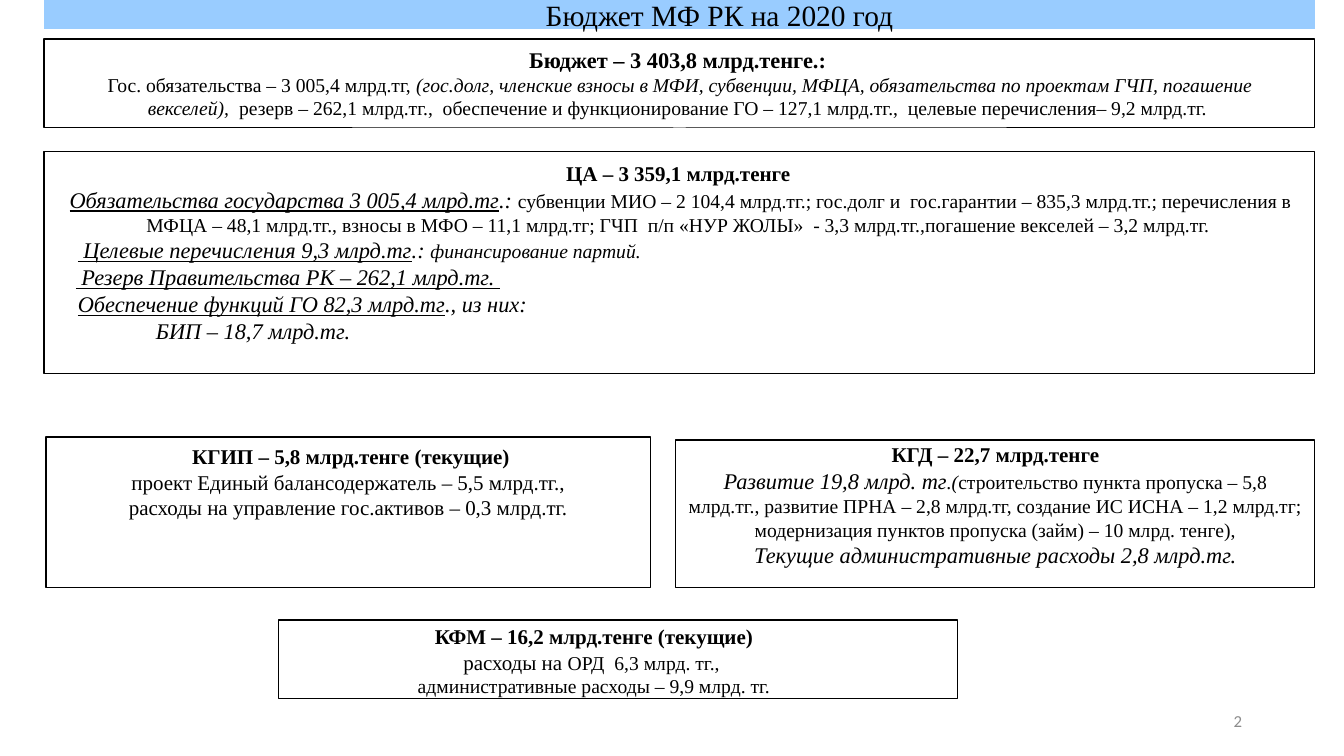
from pptx import Presentation
from pptx.dml.color import RGBColor
from pptx.enum.shapes import MSO_SHAPE
from pptx.enum.text import MSO_ANCHOR, MSO_AUTO_SIZE, PP_ALIGN
from pptx.util import Pt

BLACK = RGBColor(0, 0, 0)
GREY = RGBColor(0x8C, 0x8C, 0x8C)
BLUE = RGBColor(0x99, 0xCC, 0xFF)
SERIF = "Times New Roman"
SANS = "Calibri"
MID, LEFT, RIGHT = PP_ALIGN.CENTER, PP_ALIGN.LEFT, PP_ALIGN.RIGHT

TITLE = "Бюджет МФ РК на 2020 год"
BAR = (44, 0, 1271, 29)

# Each paragraph: alignment, left indent, runs of (text, size, style)
BLOCKS = [
    {
        "frame": (44, 39, 1271, 89),
        "text": (73, 41, 1215, 85),
        "paras": [
            (MID, 0, [("Бюджет – 3 403,8 млрд.тенге.: ", 16, "b")]),
            (MID, 0, [
                ("Гос. обязательства – 3 005,4 млрд.тг, ", 14, ""),
                ("(гос.долг, членские взносы в МФИ, субвенции, МФЦА, обязательства по проектам ГЧП, погашение векселей),  ", 14, "i"),
                ("резерв – 262,1 млрд.тг.,  обеспечение и функционирование ГО – 127,1 млрд.тг.,  целевые перечисления– 9,2 млрд.тг. ", 14, ""),
            ]),
        ],
    },
    {
        "frame": (44, 152, 1271, 222),
        "text": (46, 156, 1270, 196),
        "paras": [
            (MID, 0, [("ЦА – 3 359,1 млрд.тенге ", 15, "b")]),
            (MID, 0, [
                ("Обязательства государства 3 005,4 млрд.тг", 16, "iu"),
                (".: ", 16, "i"),
                ("субвенции МИО – 2 104,4 млрд.тг.; гос.долг и  гос.гарантии – 835,3 млрд.тг.; перечисления в МФЦА – 48,1 млрд.тг., взносы в МФО – 11,1 млрд.тг; ГЧП  п/п «НУР ЖОЛЫ»  - 3,3 млрд.тг.,погашение векселей – 3,2 млрд.тг. ", 14, ""),
            ]),
            (LEFT, 22, [
                (" Целевые перечисления 9,3 млрд.тг", 16, "iu"),
                (".: ", 16, "i"),
                ("финансирование партий.", 14, "i"),
            ]),
            (LEFT, 20, [(" Резерв Правительства РК – 262,1 млрд.тг. ", 16, "iu")]),
            (LEFT, 22, [
                ("Обеспечение функций ГО 82,3 млрд.тг", 16, "iu"),
                ("., из них:", 16, "i"),
            ]),
            (LEFT, 100, [("БИП – 18,7 млрд.тг.", 16, "i")]),
        ],
    },
    {
        "frame": (46, 437, 605, 151),
        "text": (58, 439, 586, 87),
        "paras": [
            (MID, 0, [("КГИП – 5,8 млрд.тенге (текущие)", 15, "b")]),
            (MID, 0, [("проект Единый балансодержатель – 5,5 млрд.тг., ", 15, "")]),
            (MID, 0, [("расходы на управление гос.активов – 0,3 млрд.тг. ", 15, "")]),
        ],
    },
    {
        "frame": (676, 440, 639, 148),
        "text": (676, 437, 639, 137),
        "paras": [
            (MID, 0, [("КГД – 22,7 млрд.тенге", 15, "b")]),
            (MID, 0, [
                ("Развитие 19,8 млрд. тг", 16, "i"),
                (".(", 14, "i"),
                ("строительство пункта пропуска – 5,8 млрд.тг., развитие ПРНА – 2,8 млрд.тг, создание ИС ИСНА – 1,2 млрд.тг; модернизация пунктов пропуска (займ) – 10 млрд. тенге),", 14, ""),
            ]),
            (MID, 0, [("Текущие административные расходы 2,8 млрд.тг.", 16, "i")]),
        ],
    },
    {
        "frame": (279, 620, 679, 79),
        "text": (290, 619, 608, 82),
        "paras": [
            (MID, 0, [("КФМ – 16,2 млрд.тенге (текущие)", 15, "b")]),
            (MID, 0, [("расходы на ", 15, ""), ("ОРД  6,3 млрд. тг., ", 14, "")]),
            (MID, 0, [("административные расходы – 9,9 млрд. тг.", 14, "")]),
        ],
    },
]
PAGE = (950, 701, 302, 40)


def px(n):
    return round(n * 914400 / 100.8)


def scale(box):
    return [px(n) for n in box]


def style(run, size, marks="", face=SERIF, color=BLACK):
    font = run.font
    font.name, font.size = face, Pt(size)
    font.color.rgb = color
    font.bold, font.italic, font.underline = [m in marks for m in "biu"]


def indent(para, left):
    props = para._p.get_or_add_pPr()
    props.set("marL", str(px(left)))
    props.set("indent", "0")


def add_frame(slide, box):
    rect = slide.shapes.add_shape(MSO_SHAPE.RECTANGLE, *scale(box))
    rect.shadow.inherit = False
    rect.fill.background()
    rect.line.color.rgb = BLACK
    rect.line.width = Pt(0.75)


def add_text(slide, box, paras):
    frame = slide.shapes.add_textbox(*scale(box)).text_frame
    frame.word_wrap = True
    for i, (align, left, runs) in enumerate(paras):
        para = frame.add_paragraph() if i else frame.paragraphs[0]
        para.alignment = align
        indent(para, left)
        for text, size, marks in runs:
            run = para.add_run()
            run.text = text
            style(run, size, marks)


def add_title(slide):
    bar = slide.shapes.title
    bar.left, bar.top, bar.width, bar.height = scale(BAR)
    bar.fill.solid()
    bar.fill.fore_color.rgb = BLUE
    frame = bar.text_frame
    frame.text = TITLE
    frame.word_wrap = True
    frame.auto_size = MSO_AUTO_SIZE.NONE
    frame.vertical_anchor = MSO_ANCHOR.MIDDLE
    para = frame.paragraphs[0]
    para.alignment = MID
    indent(para, 80)
    style(para.runs[0], 21)


def add_page(slide):
    frame = slide.shapes.add_textbox(*scale(PAGE)).text_frame
    frame.text = "2"
    frame.word_wrap = True
    frame.vertical_anchor = MSO_ANCHOR.MIDDLE
    para = frame.paragraphs[0]
    para.alignment = RIGHT
    style(para.runs[0], 12, face=SANS, color=GREY)


def main():
    deck = Presentation()
    deck.slide_width, deck.slide_height = px(1344), px(756)
    slide = deck.slides.add_slide(deck.slide_layouts[5])
    add_title(slide)
    for block in BLOCKS:
        add_frame(slide, block["frame"])
        add_text(slide, block["text"], block["paras"])
    add_page(slide)
    deck.save("out.pptx")


if __name__ == "__main__":
    main()
